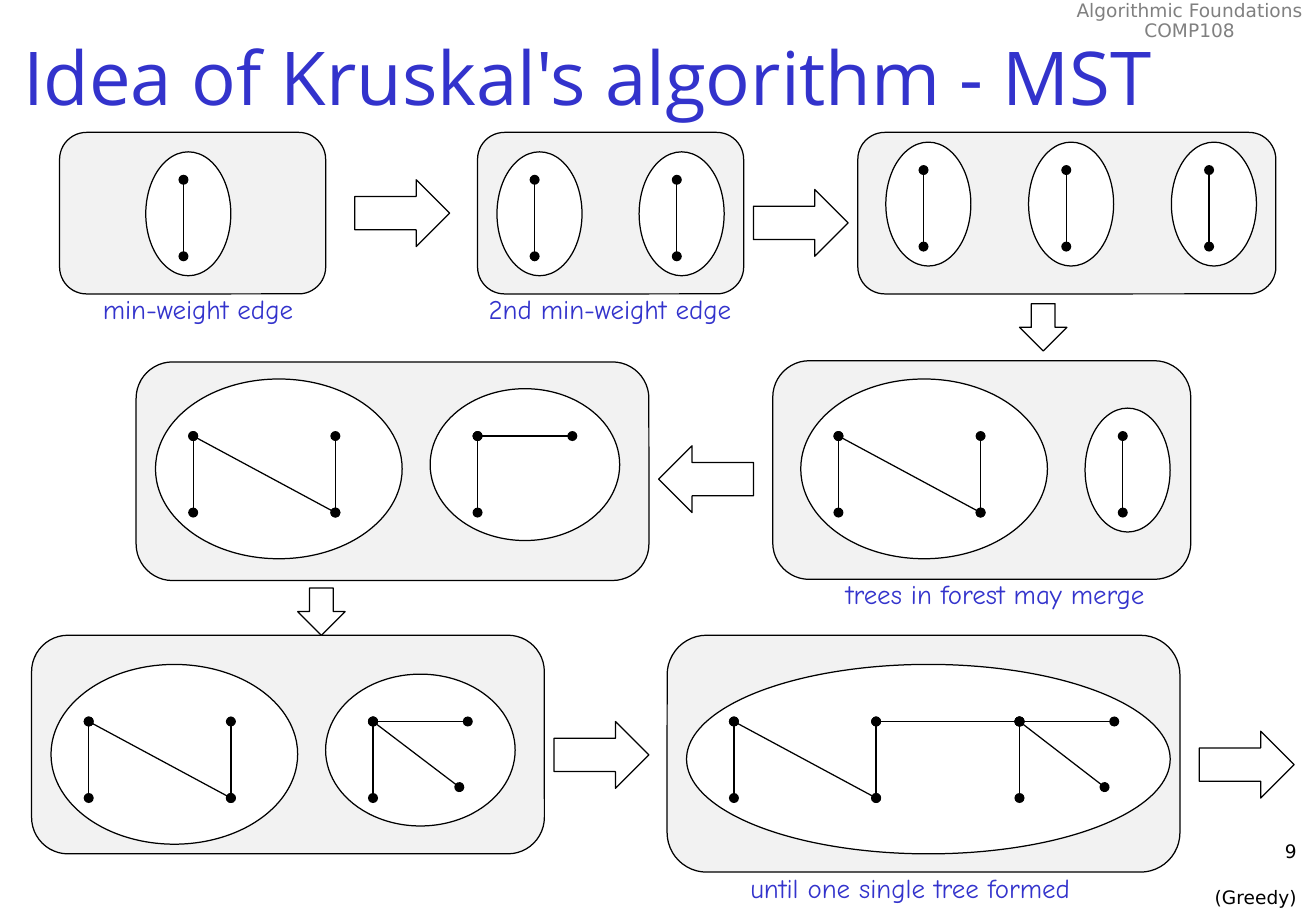
import lxml.etree
import pptx
import pptx.dml.color
import pptx.enum.shapes
import pptx.enum.text
import pptx.oxml.ns
import pptx.util

Inches = pptx.util.Inches
Pt = pptx.util.Pt
RGBColor = pptx.dml.color.RGBColor
Shape = pptx.enum.shapes.MSO_SHAPE
Align = pptx.enum.text.PP_ALIGN
qn = pptx.oxml.ns.qn

BLACK = RGBColor(0x00, 0x00, 0x00)
WHITE = RGBColor(0xFF, 0xFF, 0xFF)
PANEL_GREY = RGBColor(0xF2, 0xF2, 0xF2)
HEADER_GREY = RGBColor(0x80, 0x80, 0x80)
BLUE = RGBColor(0x33, 0x33, 0xCC)
LINE_WIDTH = Pt(0.75)

PAIR = ((0.7, 1.02), [((0.31, 0.23), (0.31, 0.86))])
ZIGZAG = ((2.03, 1.48), [
    ((0.31, 0.47), (0.31, 1.1)),
    ((1.48, 0.47), (1.48, 1.1)),
    ((0.31, 0.47), (1.48, 1.1)),
])
CORNER = ((1.56, 1.25), [
    ((0.39, 0.39), (0.39, 1.02)),
    ((0.39, 0.39), (1.17, 0.39)),
])
FORK = (CORNER[0], CORNER[1] + [((0.39, 0.39), (1.1, 0.93))])
SPANNING = ((3.98, 1.56), [
    ((0.39, 0.47), (0.39, 1.1)),
    ((1.56, 0.47), (1.56, 1.1)),
    ((2.74, 0.47), (2.74, 1.1)),
    ((0.39, 0.47), (1.56, 1.1)),
    ((1.56, 0.47), (2.74, 0.47)),
    ((2.74, 0.47), (3.52, 0.47)),
    ((2.74, 0.47), (3.44, 1.01)),
])

STAGES = [
    ((0.49, 1.09, 2.19, 1.33), [(PAIR, 0.71, 0.16)]),
    ((3.93, 1.09, 2.19, 1.33), [(PAIR, 0.16, 0.16), (PAIR, 1.33, 0.16)]),
    ((7.06, 1.09, 3.44, 1.33), [(PAIR, 0.23 + 1.175 * i, 0.08) for i in range(3)]),
    ((6.36, 2.97, 3.44, 1.8), [(ZIGZAG, 0.23, 0.15), (PAIR, 2.57, 0.39)]),
    ((1.12, 2.98, 4.22, 1.8), [(ZIGZAG, 0.16, 0.14), (CORNER, 2.42, 0.22)]),
    ((0.26, 5.23, 4.22, 1.8), [(ZIGZAG, 0.16, 0.24), (FORK, 2.42, 0.32)]),
    ((5.49, 5.23, 4.22, 1.95), [(SPANNING, 0.16, 0.24)]),
]
SIDEWAYS = (0.78, 0.55)
DOWNWARD = (0.39, 0.39)
ARROWS = [
    (Shape.RIGHT_ARROW, 2.92, 1.48, SIDEWAYS),
    (Shape.RIGHT_ARROW, 6.2, 1.56, SIDEWAYS),
    (Shape.DOWN_ARROW, 8.39, 2.5, DOWNWARD),
    (Shape.LEFT_ARROW, 5.42, 3.67, SIDEWAYS),
    (Shape.DOWN_ARROW, 2.45, 4.84, DOWNWARD),
    (Shape.RIGHT_ARROW, 4.56, 5.94, SIDEWAYS),
    (Shape.RIGHT_ARROW, 9.87, 6.02, SIDEWAYS),
]
CAPTIONS = [
    ("min-weight edge", (0.65, 2.36, 1.96, 0.37)),
    ("2nd min-weight edge", (3.85, 2.36, 2.34, 0.37)),
    ("trees in forest may merge", (6.43, 4.71, 3.52, 0.37)),
    ("until one single tree formed", (5.73, 7.13, 3.52, 0.37)),
]


def format_text(frame, font, size, color, align):
    for para in frame.paragraphs:
        para.alignment = align
        for span in para.runs:
            span.font.name = font
            span.font.size = Pt(size)
            span.font.color.rgb = color


def add_text(page, text, box, font, size, color, align, wrap=True):
    frame = page.shapes.add_textbox(*map(Inches, box)).text_frame
    frame.word_wrap = wrap
    frame.text = text
    format_text(frame, font, size, color, align)
    return frame


def add_outlined(page, kind, box, fill):
    shape = page.shapes.add_shape(kind, *map(Inches, box))
    shape.shadow.inherit = False
    shape.fill.solid()
    shape.fill.fore_color.rgb = fill
    shape.line.color.rgb = BLACK
    shape.line.width = LINE_WIDTH


def add_edge(page, start, end):
    edge = page.shapes.add_connector(
        pptx.enum.shapes.MSO_CONNECTOR.STRAIGHT, *map(Inches, start + end))
    edge.line.color.rgb = BLACK
    edge.line.width = LINE_WIDTH
    properties = edge.element.spPr
    outline = properties.find(qn("a:ln"))
    for tag in ("a:headEnd", "a:tailEnd"):
        lxml.etree.SubElement(outline, qn(tag), type="oval")
    lxml.etree.SubElement(properties, qn("a:effectLst"))


def add_tree(page, tree, left, top):
    size, edges = tree
    add_outlined(page, Shape.OVAL, (left, top) + size, WHITE)
    for start, end in edges:
        add_edge(page, (left + start[0], top + start[1]), (left + end[0], top + end[1]))


def add_stage(page, box, trees):
    add_outlined(page, Shape.ROUNDED_RECTANGLE, box, PANEL_GREY)
    for tree, across, down in trees:
        add_tree(page, tree, box[0] + across, box[1] + down)


def add_title(page, text, box):
    title = page.shapes.title
    title.left, title.top, title.width, title.height = map(Inches, box)
    frame = title.text_frame
    frame.text = text
    frame.vertical_anchor = pptx.enum.text.MSO_ANCHOR.MIDDLE
    frame.auto_size = pptx.enum.text.MSO_AUTO_SIZE.NONE
    format_text(frame, "Open Sans", 44, BLUE, Align.LEFT)


def add_header(page, box):
    frame = add_text(page, "Algorithmic Foundations\nCOMP108", box,
                     "DejaVu Sans", 11, HEADER_GREY, Align.CENTER, wrap=False)
    for para in frame.paragraphs:
        para.line_spacing = 0.9


def add_footer(page, box):
    frame = add_text(page, "9\n(Greedy)", box, "DejaVu Sans", 11, BLACK, Align.RIGHT)
    frame.paragraphs[0].space_after = Pt(13.8)


def main():
    deck = pptx.Presentation()
    deck.slide_width = Inches(10.83)
    deck.slide_height = Inches(7.5)
    page = deck.slides.add_slide(deck.slide_layouts[5])
    add_header(page, (8.75, -0.04, 2.08, 0.43))
    add_title(page, "Idea of Kruskal's algorithm - MST", (0.09, 0, 10.74, 1.25))
    for box, trees in STAGES:
        add_stage(page, box, trees)
    for kind, left, top, size in ARROWS:
        add_outlined(page, kind, (left, top) + size, WHITE)
    for text, box in CAPTIONS:
        add_text(page, text, box, "Comic Neue", 16, BLUE, Align.CENTER)
    add_footer(page, (8.51, 6.87, 2.26, 0.5))
    deck.save("out.pptx")


if __name__ == "__main__":
    main()
